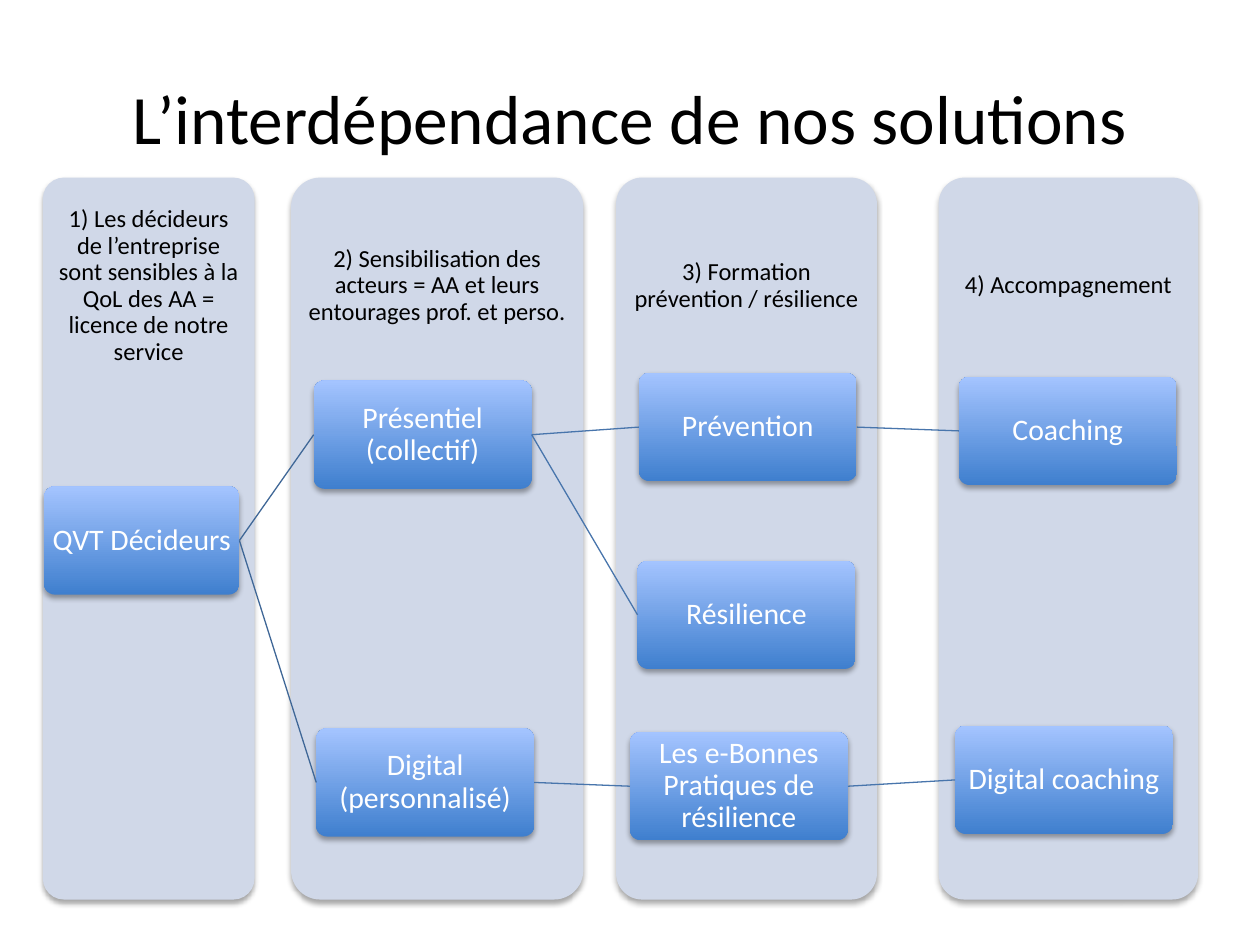
from lxml import etree
from pptx import Presentation
from pptx.dml.color import RGBColor
from pptx.enum import shapes, text
from pptx.oxml import ns
from pptx.util import Pt

HEX = {"ink": "000000", "white": "FFFFFF", "panel": "D0D8E8", "low": "3F7FCE",
       "high": "A4C4FF", "first": "3F6797", "link": "4875AC"}
RGB = {name: RGBColor.from_string(code) for name, code in HEX.items()}

deck = Presentation()
deck.slide_width, deck.slide_height = 9144000, 6858000
slide = deck.slides.add_slide(deck.slide_layouts[6])
items = slide.shapes

# The slide is a grid of 100 columns by 75 rows
COL, ROW = deck.slide_width / 100, deck.slide_height / 75


def write(shape, words, size, tone, inset, lead=0.9):
    """Set centred, wrapped text; the inset is in columns."""
    frame = shape.text_frame
    frame.word_wrap = True
    frame.vertical_anchor = text.MSO_ANCHOR.MIDDLE
    frame.margin_left = frame.margin_right = round(inset * COL)
    frame.margin_top = frame.margin_bottom = round(inset * ROW)
    para = frame.paragraphs[0]
    para.text = words
    para.alignment = text.PP_ALIGN.CENTER
    para.line_spacing = lead
    para.font.name, para.font.size = "Calibri", Pt(size)
    para.font.color.rgb = RGB[tone]


def add_card(x, y, w, h):
    """Add a borderless rounded card with a soft shadow below it."""
    card = items.add_shape(shapes.MSO_SHAPE.ROUNDED_RECTANGLE,
                           round(x * COL), round(y * ROW), round(w * COL), round(h * ROW))
    card.adjustments[0] = 0.1
    card.line.fill.background()
    card.shadow.inherit = False
    effects = card._element.spPr.find(ns.qn("a:effectLst"))
    shade = etree.SubElement(effects, ns.qn("a:outerShdw"), blurRad=str(Pt(3.1)),
                             dist=str(Pt(1.8)), dir="5400000", rotWithShape="0")
    black = etree.SubElement(shade, ns.qn("a:srgbClr"), val=HEX["ink"])
    etree.SubElement(black, ns.qn("a:alpha"), val="35000")
    return card


title = items.add_textbox(round(5 * COL), round(3 * ROW), round(90 * COL), round(12.5 * ROW))
write(title, "L’interdépendance de nos solutions", 39.6, "ink", 1, 1)

# Panels: left, width, heading
TOP, TALL, HEAD = 14.1, 57.3, 17.2
panels = [
    (3.4, 16.8, "1) Les décideurs de l’entreprise sont sensibles à la QoL des AA = "
                "licence de notre service"),
    (23.1, 23.2, "2) Sensibilisation des acteurs = AA et leurs entourages prof. et perso."),
    (48.9, 20.7, "3) Formation prévention / résilience"),
    (74.5, 20.6, "4) Accompagnement"),
]
for x, w, words in panels:
    panel = add_card(x, TOP, w, TALL)
    panel.fill.solid()
    panel.fill.fore_color.rgb = RGB["panel"]
    label = items.add_textbox(round(x * COL), round(TOP * ROW), round(w * COL), round(HEAD * ROW))
    write(label, words, 14, "ink", 1.1)

# Boxes: left, top, width, words
WIDE, HIGH = 17.3, 8.6
boxes = {
    "qvt": (3.5, 38.6, 15.5, "QVT Décideurs"),
    "group": (24.9, 30.2, WIDE, "Présentiel (collectif)"),
    "prev": (50.7, 29.6, WIDE, "Prévention"),
    "coach": (76.1, 29.9, WIDE, "Coaching"),
    "resil": (50.6, 44.5, WIDE, "Résilience"),
    "digit": (25.1, 57.8, WIDE, "Digital (personnalisé)"),
    "tips": (50, 58.1, WIDE, "Les e-Bonnes Pratiques de résilience"),
    "remote": (75.8, 57.6, WIDE, "Digital coaching"),
}
nodes = {}
for key, (x, y, w, words) in boxes.items():
    node = nodes[key] = add_card(x, y, w, HIGH)
    node.fill.gradient()
    node.fill.gradient_angle = 90
    for stop, tone in zip(node.fill.gradient_stops, ("low", "high")):
        stop.color.rgb = RGB[tone]
    write(node, words, 17, "white", 0.1)

# Links run from the right side of one box to the left side of the next
LEFT, RIGHT = 1, 3
links = [("qvt", "group"), ("qvt", "digit"), ("group", "prev"), ("group", "resil"),
         ("prev", "coach"), ("digit", "tips"), ("tips", "remote")]
for start, end in links:
    link = items.add_connector(shapes.MSO_CONNECTOR.STRAIGHT, 0, 0, 0, 0)
    link.begin_connect(nodes[start], RIGHT)
    link.end_connect(nodes[end], LEFT)
    link.line.color.rgb = RGB["first" if start == "qvt" else "link"]
    link.line.width = Pt(0.75)
    etree.SubElement(link._element.spPr, ns.qn("a:effectLst"))

deck.save("out.pptx")
